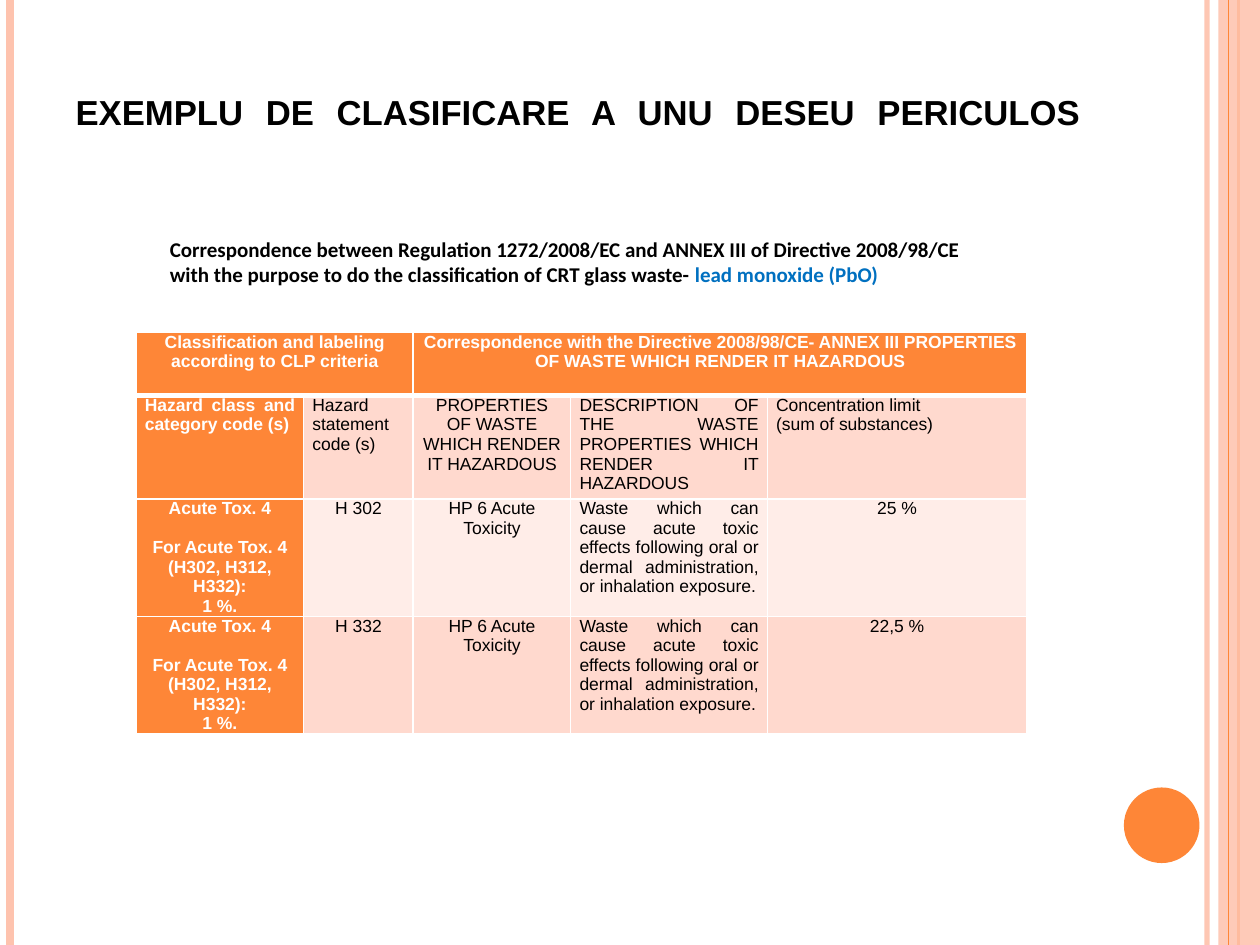
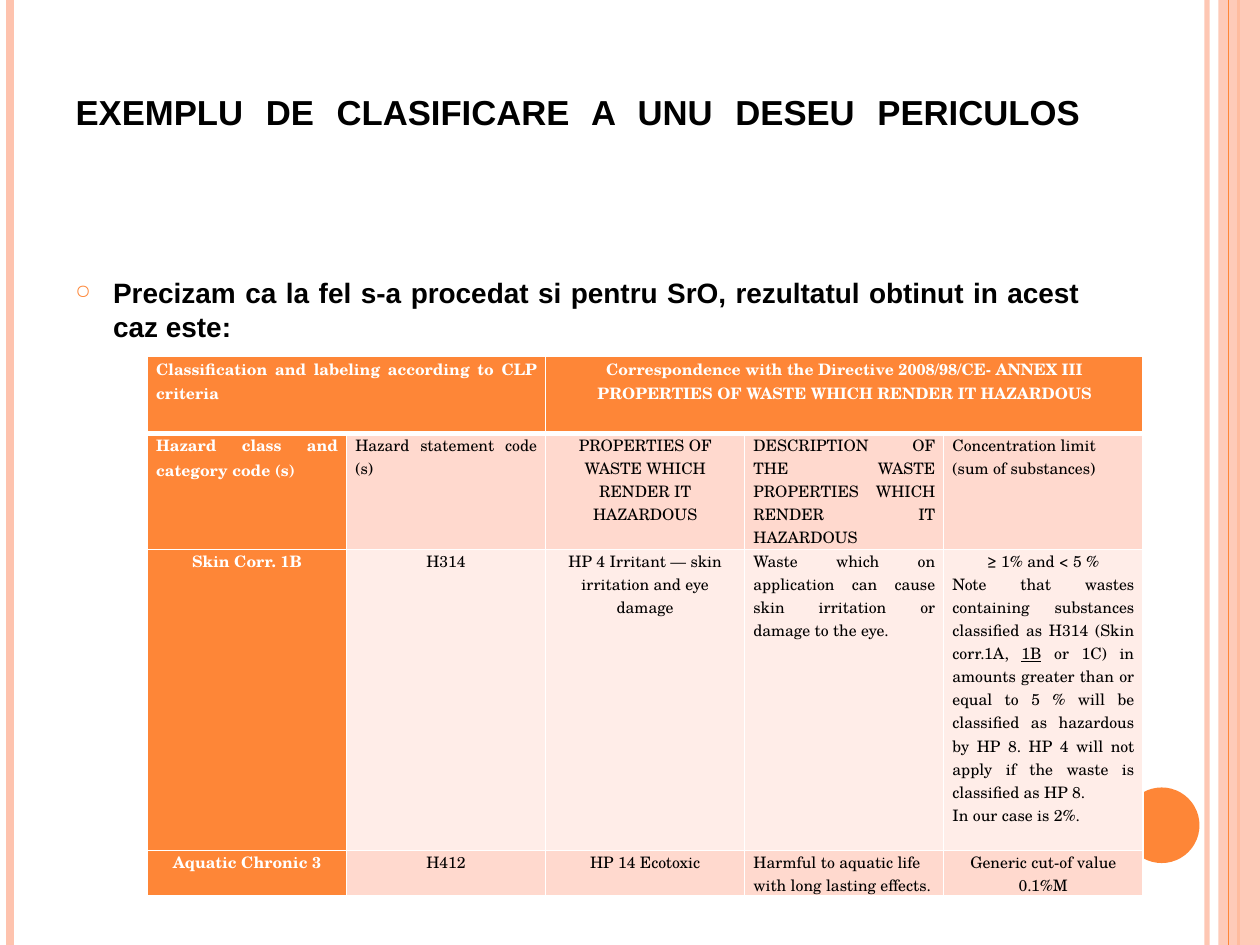
from dataclasses import dataclass

from lxml import etree
from pptx import Presentation
from pptx.dml.color import RGBColor
from pptx.enum import shapes, text
from pptx.oxml import ns
from pptx.util import Inches, Pt

ORANGE = RGBColor(0xFE, 0x86, 0x37)
PEACH = RGBColor(0xFE, 0xC3, 0xAE)
ROSE = RGBColor(0xFF, 0xD9, 0xCE)
PALE_ROSE = RGBColor(0xFF, 0xED, 0xE8)
BLUE = RGBColor(0x00, 0x70, 0xC0)
BLACK = RGBColor(0, 0, 0)
WHITE = RGBColor(0xFF, 0xFF, 0xFF)

LEFT, CENTER, JUSTIFY = text.PP_ALIGN.LEFT, text.PP_ALIGN.CENTER, text.PP_ALIGN.JUSTIFY
TITLE = "EXEMPLU DE CLASIFICARE A UNU DESEU PERICULOS"
TITLE_BOX = (0.5, 0.3, 8.17, 1.25)


@dataclass
class Line:
    """One paragraph of a cell; every second span is underlined."""
    spans: tuple
    align: int = CENTER
    gap: float = 0


def centred(*words):
    """Return one centred line per string."""
    return [Line((word,)) for word in words]


def justified(*words):
    """Return one justified line per string."""
    return [Line((word,), JUSTIFY) for word in words]


def heading_rows(first_cell):
    """Return the two heading rows that both tables share."""
    return [
        [first_cell, [],
         centred("Correspondence with the Directive 2008/98/CE- ANNEX III "
                 "PROPERTIES OF WASTE WHICH RENDER IT HAZARDOUS"), [], []],
        [justified("Hazard class and category code (s)"),
         justified("Hazard statement code (s)"),
         centred("PROPERTIES OF WASTE WHICH RENDER IT HAZARDOUS"),
         justified("DESCRIPTION OF THE WASTE PROPERTIES WHICH RENDER IT HAZARDOUS"),
         justified("Concentration limit", "(sum of substances)")],
    ]


def acute_row(code, limit):
    """Return the row of one acute toxicity statement."""
    return [
        [Line(("Acute Tox. 4",)),
         Line(("For Acute Tox. 4 (H302, H312, H332):",), gap=11.2),
         Line(("1 %.",))],
        centred(code),
        centred("HP 6 Acute Toxicity"),
        justified("Waste which can cause acute toxic effects following oral or "
                  "dermal administration, or inhalation exposure."),
        centred(limit),
    ]


CLP_HEADING = "Classification and labeling according to CLP criteria"
LEAD_ROWS = heading_rows(centred(CLP_HEADING)) + [
    acute_row("H 302", "25 %"), acute_row("H 332", "22,5 %")]
STRONTIUM_ROWS = heading_rows(justified(CLP_HEADING)) + [
    [centred("Skin Corr. 1B"),
     centred("H314"),
     centred("HP 4 Irritant — skin irritation and eye damage"),
     justified("Waste which on application can cause skin irritation or damage to the eye."),
     [Line(("≥ 1% and < 5 %",)),
      Line(("Note that wastes containing substances classified as H314 (Skin corr.1A, ",
            "1B",
            " or 1C) in amounts greater than or equal to 5 % will be classified as "
            "hazardous by HP 8. HP 4 will not apply if the waste is classified as HP 8."),
           JUSTIFY),
      Line(("In our case is 2%.",), JUSTIFY)]],
    [centred("Aquatic Chronic 3"),
     centred("H412"),
     centred("HP 14 Ecotoxic"),
     [Line(("Harmful to aquatic life with long lasting effects.",), LEFT)],
     centred("Generic cut-of value 0.1%M")],
]


def add_span(para, words, font, size, color, bold=True):
    """Add one formatted run to a paragraph."""
    span = para.add_run()
    span.text = words
    span.font.name, span.font.size, span.font.bold = font, Pt(size), bold
    span.font.color.rgb = color
    return span


def add_xml(parent, tag, **attributes):
    """Append a drawing element with its attributes."""
    return etree.SubElement(parent, ns.qn(tag), attributes)


def set_opacity(fill_parent, percent):
    """Make the solid colour under an element partly transparent."""
    color = next(fill_parent.iter(ns.qn("a:srgbClr")))
    add_xml(color, "a:alpha", val=str(percent * 1000))


def add_rule(page, x, color, width):
    """Draw a vertical line over the full height of the page."""
    rule = page.shapes.add_connector(
        shapes.MSO_CONNECTOR.STRAIGHT, Inches(x), 0, Inches(x), Inches(7.5))
    rule.line.color.rgb, rule.line.width = color, Pt(width)
    add_xml(rule._element.spPr, "a:effectLst")
    return rule


def add_solid(page, kind, box, color):
    """Draw a plain filled shape without outline."""
    solid = page.shapes.add_shape(kind, *map(Inches, box))
    solid.shadow.inherit = False
    solid.fill.solid()
    solid.fill.fore_color.rgb = color
    solid.line.fill.background()
    return solid


def add_frame(page):
    """Draw the edge bands and the corner disc."""
    set_opacity(add_rule(page, 9.58, PEACH, 3)._element, 93)
    add_rule(page, 0.08, PEACH, 4.5)
    add_rule(page, 9.83, ORANGE, 1.5)
    band = add_solid(page, shapes.MSO_SHAPE.RECTANGLE, (9.67, 0, 0.33, 7.5), PEACH)
    set_opacity(band._element.spPr, 87)
    add_rule(page, 9.75, ORANGE, 0.75)
    add_solid(page, shapes.MSO_SHAPE.OVAL, (8.92, 6.25, 0.6, 0.6), ORANGE)


def add_title(page, box):
    """Place the title, stretched over the width of its box."""
    title = page.shapes.title
    title.left, title.top, title.width, title.height = map(Inches, box)
    frame = title.text_frame
    frame.auto_size = text.MSO_AUTO_SIZE.NONE
    frame.vertical_anchor = text.MSO_ANCHOR.BOTTOM
    para = frame.paragraphs[0]
    para.alignment = JUSTIFY
    add_span(para, TITLE, "Arial", 19.8, BLACK)
    para.add_line_break()
    add_xml(para._p, "a:endParaRPr", sz="2700")


def add_text_box(page, box):
    """Add a wrapping text box and return its frame."""
    frame = page.shapes.add_textbox(*map(Inches, box)).text_frame
    frame.word_wrap = True
    return frame


def add_caption(page, box):
    """Write the two-line caption above the lead table."""
    frame = add_text_box(page, box)
    frame.word_wrap = False
    add_span(frame.paragraphs[0], "Correspondence between Regulation 1272/2008/EC and "
             "ANNEX III of Directive 2008/98/CE", "Calibri", 12, BLACK)
    para = frame.add_paragraph()
    add_span(para, "with the purpose to do the classification of CRT glass waste- ",
             "Calibri", 12, BLACK)
    add_span(para, "lead monoxide (PbO)", "Calibri", 12, BLUE)


def add_bullet(page, box):
    """Write the bulleted remark above the strontium table."""
    para = add_text_box(page, box).paragraphs[0]
    para.alignment = JUSTIFY
    add_span(para, "Precizam ca la fel s-a procedat si pentru SrO, rezultatul obtinut "
             "in acest caz este:", "Arial", 16, BLACK)
    properties = para._p.get_or_add_pPr()
    properties.set("marL", str(Inches(0.3)))
    properties.set("indent", str(-Inches(0.3)))
    add_xml(add_xml(properties, "a:buClr"), "a:srgbClr", val=str(ORANGE))
    add_xml(properties, "a:buSzPct", val="70000")
    add_xml(properties, "a:buChar", char="○")


def set_borders(cell, bottom):
    """Give a cell white borders, with its own bottom width."""
    properties = cell._tc.get_or_add_tcPr()
    widths = {"a:lnL": 1, "a:lnR": 1, "a:lnT": 1, "a:lnB": bottom}
    for place, (tag, width) in enumerate(widths.items()):
        border = etree.Element(ns.qn(tag), w=str(Pt(width)))
        add_xml(add_xml(border, "a:solidFill"), "a:srgbClr", val=str(WHITE))
        properties.insert(place, border)


def fill_cell(cell, lines, font, size, heading):
    """Write the lines of one cell."""
    cell.margin_left = cell.margin_right = Inches(0.07)
    cell.margin_top = cell.margin_bottom = 0
    frame = cell.text_frame
    for number, line in enumerate(lines):
        para = frame.add_paragraph() if number else frame.paragraphs[0]
        para.alignment = line.align
        para.space_before = Pt(line.gap)
        for index, words in enumerate(line.spans):
            span = add_span(para, words, font, size, WHITE if heading else BLACK, heading)
            if index % 2:
                span.font.underline = True


def add_hazard_table(page, corner, widths, heights, rows, font, size):
    """Build a hazard table with an orange heading row and column."""
    box = (*corner, sum(widths), sum(heights))
    table = page.shapes.add_table(len(rows), len(widths), *map(Inches, box)).table
    table.first_row = table.horz_banding = False
    for column, width in zip(table.columns, widths):
        column.width = Inches(width)
    for row, height in zip(table.rows, heights):
        row.height = Inches(height)
    for down, row in enumerate(rows):
        for across, lines in enumerate(row):
            cell = table.cell(down, across)
            heading = down == 0 or across == 0
            fill_cell(cell, lines, font, size, heading)
            cell.fill.solid()
            cell.fill.fore_color.rgb = ORANGE if heading else ROSE if down % 2 else PALE_ROSE
            set_borders(cell, 1 if down else 3)
    table.cell(0, 0).merge(table.cell(0, 1))
    table.cell(0, 2).merge(table.cell(0, 4))


def add_page(deck):
    """Add a page with the shared frame and title."""
    page = deck.slides.add_slide(deck.slide_layouts[5])
    add_frame(page)
    add_title(page, TITLE_BOX)
    return page


def build_lead_page(deck):
    """Build the page on lead monoxide."""
    page = add_page(deck)
    add_hazard_table(page, (1.08, 2.64), (1.33, 0.87, 1.25, 1.56, 2.06),
                     (0.5, 0.82, 0.93, 0.93), LEAD_ROWS, "Arial", 10)
    add_caption(page, (1.25, 1.83, 6.6, 0.81))


def build_strontium_page(deck):
    """Build the page on strontium oxide."""
    page = add_page(deck)
    add_bullet(page, (0.5, 2.14, 8.17, 0.65))
    add_hazard_table(page, (1.17, 2.83), (1.58,) * 5, (0.61, 0.92, 2.39, 0.36),
                     STRONTIUM_ROWS, "TeX Gyre Schola", 9)


def main():
    """Build and save the deck."""
    deck = Presentation()
    deck.slide_width, deck.slide_height = Inches(10), Inches(7.5)
    build_lead_page(deck)
    build_strontium_page(deck)
    deck.save("out.pptx")


if __name__ == "__main__":
    main()
